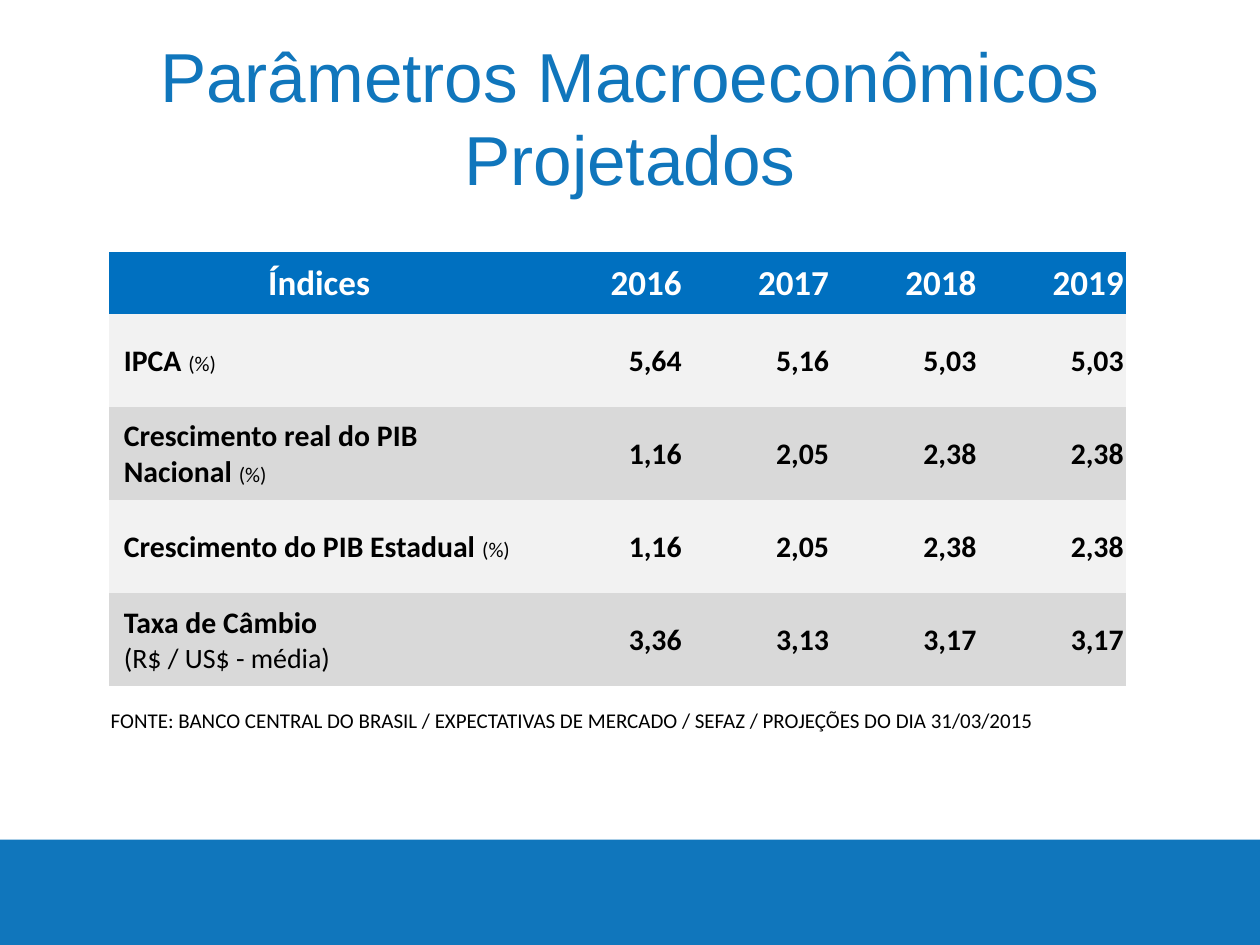
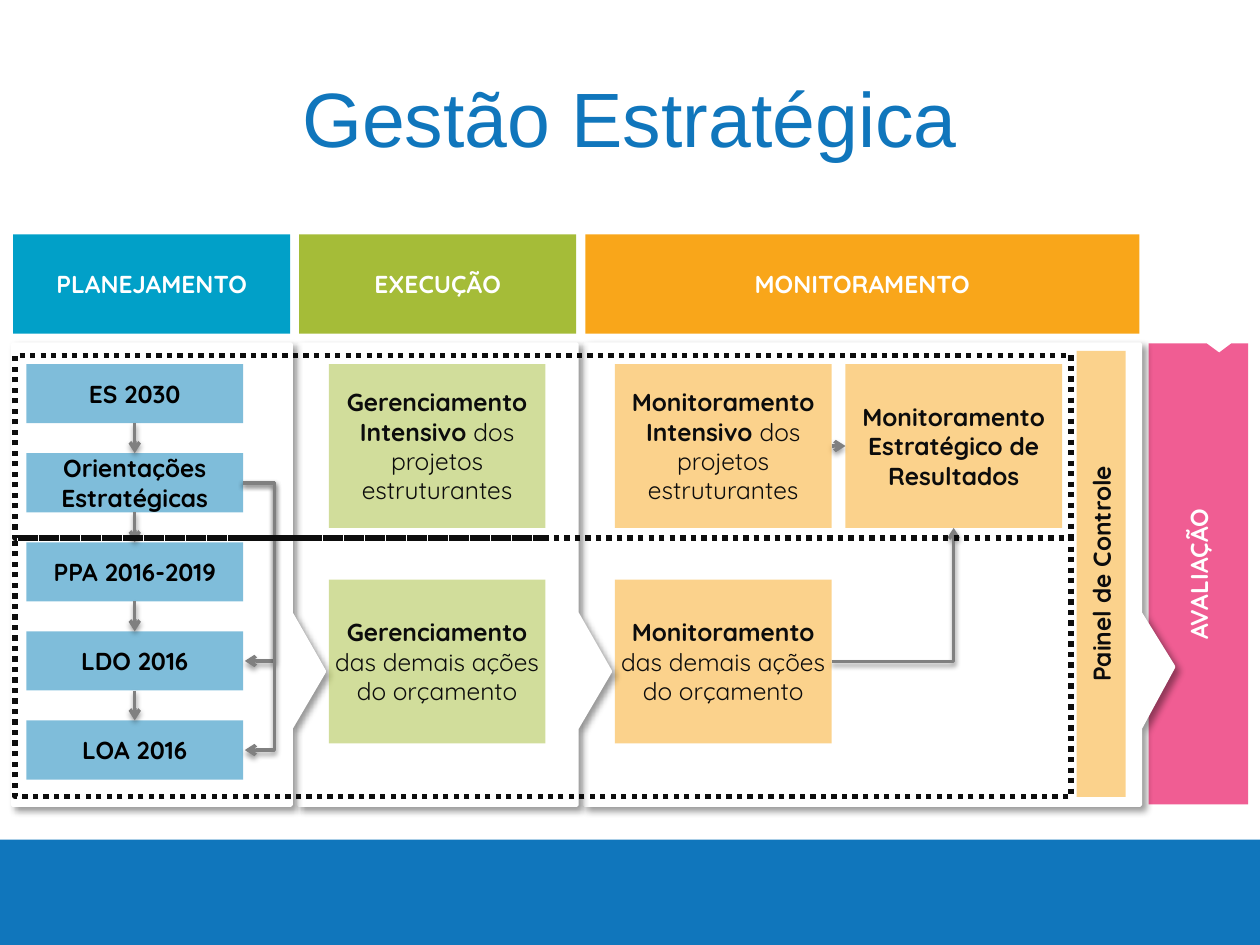
from lxml.etree import SubElement
from pptx import Presentation
from pptx.dml.color import RGBColor
from pptx.enum.dml import MSO_LINE
from pptx.enum.shapes import MSO_CONNECTOR, MSO_SHAPE
from pptx.enum.text import MSO_ANCHOR, MSO_AUTO_SIZE, PP_ALIGN
from pptx.oxml.ns import qn
from pptx.util import Pt

# Shared colours and text formats
BLUE, WHITE, BLACK, INK, GRAY = "1076BC", "FFFFFF", "000000", "0C0C0C", "808080"
CYAN, STEP_BLUE, GREEN, ORANGE, PINK = "01A0C8", "007DB7", "A5BC38", "F9A61A", "F05D93"
TABLE_HEAD, TABLE_ROWS = "0070C0", ("F2F2F2", "D9D9D9")

HEADING = {"name": "Quicksand", "size": Pt(14), "bold": True, "color": WHITE}
BOX_BOLD = HEADING | {"color": INK}
BOX_PLAIN = BOX_BOLD | {"bold": False}
STEP = HEADING | {"color": BLACK}
TABLE_HEADING = {"name": "Calibri", "size": Pt(20), "bold": True, "color": WHITE}
TABLE_BOLD = TABLE_HEADING | {"size": Pt(17), "color": BLACK}
TABLE_UNIT = TABLE_BOLD | {"size": Pt(12), "bold": False}
TABLE_DETAIL = TABLE_UNIT | {"size": Pt(16)}

# Shadows: opacity in percent, blur and distance in points, angle in degrees
PANEL_SHADOW = (40, 4, 3, 45)
ARROW_SHADOW = (38, 3.1, 1.6, 90)

YEARS = ("2016", "2017", "2018", "2019")
INDICES = [
    ([[("IPCA ", TABLE_BOLD), ("(%)", TABLE_UNIT)]],
     ("5,64", "5,16", "5,03", "5,03")),
    ([[("Crescimento real do PIB Nacional ", TABLE_BOLD), ("(%)", TABLE_UNIT)]],
     ("1,16", "2,05", "2,38", "2,38")),
    ([[("Crescimento do PIB Estadual ", TABLE_BOLD), ("(%)", TABLE_UNIT)]],
     ("1,16", "2,05", "2,38", "2,38")),
    ([[("Taxa de Câmbio", TABLE_BOLD)], [("(R$ / US$ - média)", TABLE_DETAIL)]],
     ("3,36", "3,13", "3,17", "3,17")),
]


def color(value):
    return RGBColor.from_string(value)


def set_attributes(target, values):
    for name, value in values.items():
        setattr(target, name, value)


def write_paragraph(paragraph, runs, alignment=PP_ALIGN.CENTER):
    paragraph.alignment = alignment
    for text, values in runs:
        run = paragraph.add_run()
        run.text = text
        for name, value in values.items():
            if name == "color":
                run.font.color.rgb = color(value)
            else:
                setattr(run.font, name, value)


def add_shadow(shape, shadow):
    opacity, blur, distance, angle = shadow
    properties = shape._element.spPr
    for old in properties.findall(qn("a:effectLst")):
        properties.remove(old)
    effects = SubElement(properties, qn("a:effectLst"))
    outer = SubElement(effects, qn("a:outerShdw"), blurRad=str(int(Pt(blur))),
                       dist=str(int(Pt(distance))), dir=str(angle * 60000),
                       algn="tl", rotWithShape="0")
    shade = SubElement(outer, qn("a:srgbClr"), val=BLACK)
    SubElement(shade, qn("a:alpha"), val=str(opacity * 1000))


def add_box(slide, place, fill=None, runs=(), opacity=100, kind=MSO_SHAPE.RECTANGLE,
            rotation=0):
    shape = slide.shapes.add_shape(kind, *map(Pt, place))
    shape.shadow.inherit = False
    shape.rotation = rotation
    shape.line.fill.background()
    if fill:
        shape.fill.solid()
        shape.fill.fore_color.rgb = color(fill)
    else:
        shape.fill.background()
    if opacity < 100:
        shade = shape._element.spPr.find(qn("a:solidFill")).find(qn("a:srgbClr"))
        SubElement(shade, qn("a:alpha"), val=str(opacity * 1000))
    set_attributes(shape.text_frame, {
        "word_wrap": True, "vertical_anchor": MSO_ANCHOR.MIDDLE,
        "margin_left": Pt(2.88), "margin_right": Pt(2.88),
        "margin_top": Pt(3.6), "margin_bottom": Pt(3.6)})
    if runs:
        write_paragraph(shape.text_frame.paragraphs[0], runs)
    return shape


def outline(shape, line_color, width):
    shape.line.color.rgb = color(line_color)
    shape.line.width = Pt(width)


def add_callout(slide, place, tip, fill, **options):
    callout = add_box(slide, place, fill, kind=MSO_SHAPE.RECTANGULAR_CALLOUT, **options)
    callout.adjustments[0], callout.adjustments[1] = tip
    return callout


def add_panel(slide, place, tip):
    panel = add_callout(slide, place, tip, WHITE)
    outline(panel, WHITE, 2)
    add_shadow(panel, PANEL_SHADOW)


def add_arrow(slide, start, end, preset="line", bend=None):
    kind = MSO_CONNECTOR.STRAIGHT if preset == "line" else MSO_CONNECTOR.ELBOW
    arrow = slide.shapes.add_connector(kind, *map(Pt, (*start, *end)))
    outline(arrow, GRAY, 2)
    SubElement(arrow.line._get_or_add_ln(), qn("a:tailEnd"), type="arrow")
    geometry = arrow._element.spPr.find(qn("a:prstGeom"))
    geometry.set("prst", preset)
    if bend is not None:
        SubElement(geometry.find(qn("a:avLst")), qn("a:gd"), name="adj1",
                   fmla=f"val {int(bend * 100000)}")
    add_shadow(arrow, ARROW_SHADOW)


def add_title_slide(presentation, layout, text, size):
    slide = presentation.slides.add_slide(layout)
    title = slide.shapes.title
    set_attributes(title, {"left": Pt(36), "top": Pt(21.6),
                           "width": Pt(648), "height": Pt(90)})
    set_attributes(title.text_frame, {"word_wrap": True, "auto_size": MSO_AUTO_SIZE.NONE,
                                      "vertical_anchor": MSO_ANCHOR.MIDDLE})
    write_paragraph(title.text_frame.paragraphs[0],
                    [(text, {"name": "Arial", "size": Pt(size), "color": BLUE})])
    return slide


def move_band_to_layout(slide, layout):
    band = add_box(slide, (0, 479.8, 720, 60.2), BLUE)
    layout.shapes.element.insert(2, band._element)


def fill_cell(cell, paragraphs, fill, alignment, indent=0):
    cell.fill.solid()
    cell.fill.fore_color.rgb = color(fill)
    set_attributes(cell, {"vertical_anchor": MSO_ANCHOR.MIDDLE, "margin_left": Pt(1.2),
                          "margin_right": Pt(1.2), "margin_top": Pt(1.2),
                          "margin_bottom": 0})
    for index, runs in enumerate(paragraphs):
        frame = cell.text_frame
        paragraph = frame.add_paragraph() if index else frame.paragraphs[0]
        paragraph._p.get_or_add_pPr().set("marL", str(int(Pt(indent))))
        write_paragraph(paragraph, runs, alignment)


def add_index_table(slide):
    widths = [240, 88.4] + [84.2] * 3
    heights = [35.3] + [53.2] * len(INDICES)
    table = slide.shapes.add_table(len(heights), len(widths), Pt(62.4), Pt(144),
                                   Pt(sum(widths)), Pt(sum(heights))).table
    set_attributes(table, {"first_row": False, "horz_banding": False})
    style = table._tbl.tblPr.find(qn("a:tableStyleId"))
    style.text = "{2D5ABB26-0587-4C30-8999-92F81FD0307C}"
    for column, width in zip(table.columns, widths):
        column.width = Pt(width)
    for row, height in zip(table.rows, heights):
        row.height = Pt(height)

    fill_cell(table.cell(0, 0), [[("Índices", TABLE_HEADING)]], TABLE_HEAD, PP_ALIGN.CENTER)
    for column, year in enumerate(YEARS, 1):
        fill_cell(table.cell(0, column), [[(year, TABLE_HEADING)]], TABLE_HEAD, PP_ALIGN.RIGHT)
    for row, (label, values) in enumerate(INDICES, 1):
        fill = TABLE_ROWS[(row - 1) % 2]
        fill_cell(table.cell(row, 0), label, fill, PP_ALIGN.LEFT, indent=7.2)
        for column, value in enumerate(values, 1):
            fill_cell(table.cell(row, column), [[(value, TABLE_BOLD)]], fill, PP_ALIGN.RIGHT)


def add_source_note(slide, text):
    note = slide.shapes.add_textbox(Pt(56.2), Pt(401), Pt(595.4), Pt(21.6))
    note.text_frame.word_wrap = True
    write_paragraph(note.text_frame.paragraphs[0], [(text, TABLE_UNIT)], PP_ALIGN.LEFT)


# Strategic management diagram
PANEL_TOP, PANEL_HEIGHT = 196.6, 263.5
BOX_WIDTH, BOX_HEIGHT, BOX_TOPS = 123.8, 93.6, (208.1, 331.2)
STEP_LEFT, STEP_HEIGHT, STEP_PITCH = 15.1, 33.8, 50.9


def add_phase(slide, left, width, tip, name, fill):
    add_panel(slide, (left, PANEL_TOP, width, PANEL_HEIGHT), tip)
    add_box(slide, (left + 0.4, 134, width - 0.8, 56.6), fill, [(name, HEADING)])


def add_activity(slide, left, top, fill, bold, plain=""):
    runs = [(bold, BOX_BOLD)] + ([(plain, BOX_PLAIN)] if plain else [])
    add_box(slide, (left, top, BOX_WIDTH, BOX_HEIGHT), fill, runs, opacity=50)


def add_activity_pair(slide, left, fill, name):
    upper, lower = BOX_TOPS
    add_activity(slide, left, upper, fill, f"{name} Intensivo ", "dos projetos estruturantes")
    add_activity(slide, left, lower, fill, f"{name} ", "das demais ações do orçamento")


def add_monitoring(slide):
    left, results_left = 351.4, 483.1
    right = left + BOX_WIDTH
    upper, lower = (top + BOX_HEIGHT / 2 for top in BOX_TOPS)
    add_phase(slide, 334.1, 317.5, (0.56, 0.2), "MONITORAMENTO", ORANGE)
    add_arrow(slide, (right, upper), (results_left, upper), "bentConnector3", 0.5)
    add_arrow(slide, (right, lower), (results_left + BOX_WIDTH / 2, BOX_TOPS[0] + BOX_HEIGHT),
              "bentConnector2")
    add_activity_pair(slide, left, ORANGE, "Monitoramento")
    add_activity(slide, results_left, BOX_TOPS[0], ORANGE,
                 "Monitoramento Estratégico de Resultados")
    add_box(slide, (501.8, 313.9, 254.9, 28.1), ORANGE, [("Painel de Controle", BOX_BOLD)],
            opacity=50, rotation=270)


def add_planning_steps(slide):
    names = ("ES 2030", "Orientações Estratégicas", "PPA 2016-2019", "LDO 2016", "LOA 2016")
    tops = [BOX_TOPS[0] + STEP_PITCH * index for index in range(len(names))]
    middles = [top + STEP_HEIGHT / 2 for top in tops]
    center, right = STEP_LEFT + BOX_WIDTH / 2, STEP_LEFT + BOX_WIDTH
    for name, top in zip(names, tops):
        add_box(slide, (STEP_LEFT, top, BOX_WIDTH, STEP_HEIGHT), STEP_BLUE, [(name, STEP)],
                opacity=50)
    for top, next_top in zip(tops, tops[1:]):
        add_arrow(slide, (center, top + STEP_HEIGHT), (center, next_top))
    for target in middles[3:]:
        add_arrow(slide, (right, middles[1]), (right + 1, target), "bentConnector3", 18)


def add_dotted_frames(slide):
    for top, height in ((203, 104.4), (307.4, 147.6)):
        frame = add_box(slide, (8.6, top, 603.4, height))
        outline(frame, "0D0D0D", 3)
        frame.line.dash_style = MSO_LINE.ROUND_DOT


def main():
    presentation = Presentation()
    set_attributes(presentation, {"slide_width": Pt(720), "slide_height": Pt(540)})
    layout = presentation.slide_layouts.get_by_name("Title Only")

    # Projected indices
    slide = add_title_slide(presentation, layout, "Parâmetros Macroeconômicos Projetados", 39.6)
    move_band_to_layout(slide, layout)
    add_index_table(slide)
    add_source_note(slide, "FONTE: BANCO CENTRAL DO BRASIL / EXPECTATIVAS DE MERCADO / "
                           "SEFAZ / PROJEÇÕES DO DIA 31/03/2015")

    # Management cycle, from the last phase back to the first
    slide = add_title_slide(presentation, layout, "Gestão Estratégica", 44)
    add_callout(slide, (553, 299.5, 263.5, 56.9), (0.48, 0.21), PINK,
                runs=[("AVALIAÇÃO", HEADING)], rotation=270)
    add_monitoring(slide)
    add_phase(slide, 170.6, 159.1, (0.62, 0.21), "EXECUÇÃO", GREEN)
    add_phase(slide, 7.2, 159.1, (0.62, 0.21), "PLANEJAMENTO", CYAN)
    add_planning_steps(slide)
    add_activity_pair(slide, 187.9, GREEN, "Gerenciamento")
    add_dotted_frames(slide)
    presentation.save("out.pptx")


if __name__ == "__main__":
    main()
